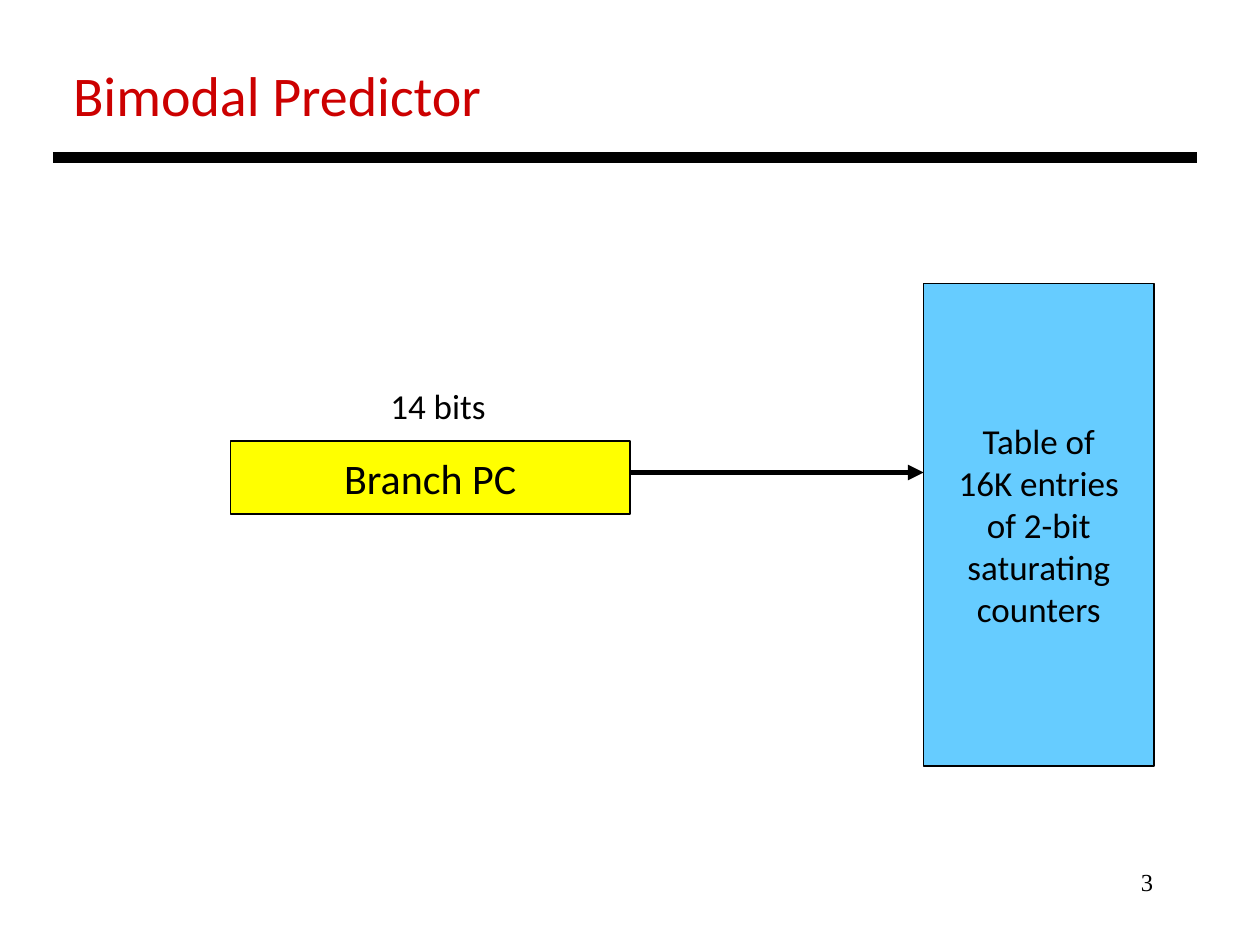
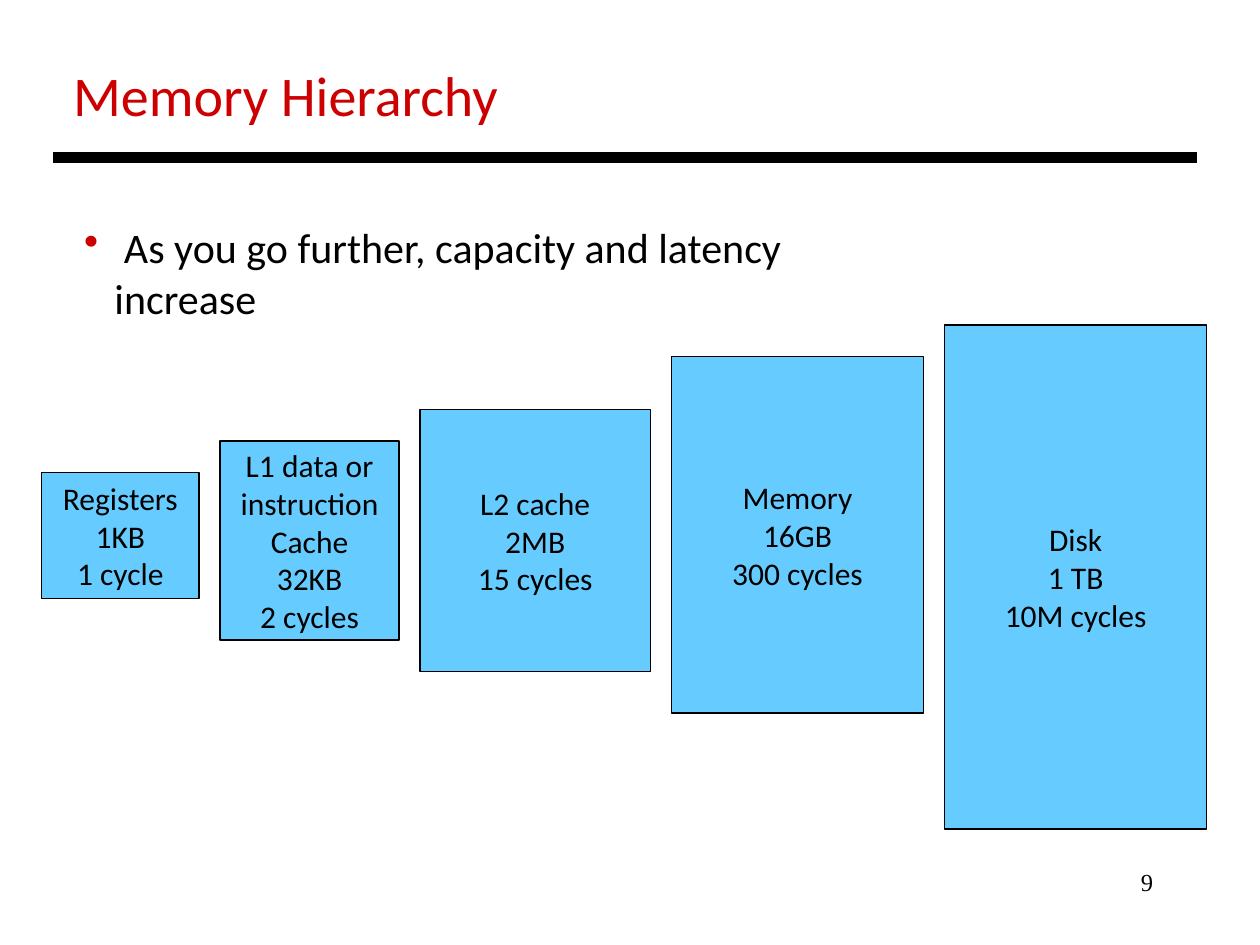
from pptx import Presentation
from pptx.dml.color import RGBColor as RGB
from pptx.enum.shapes import MSO_CONNECTOR as Conn, MSO_SHAPE as Kind
from pptx.enum.text import MSO_ANCHOR as Anchor, MSO_AUTO_SIZE as Fit, PP_ALIGN as Align
from pptx.oxml.ns import qn
from pptx.util import Inches, Pt
from lxml.etree import SubElement as Sub

BLACK, RED, BLUE, YELLOW = "000000", "CC0000", "66CCFF", "FFFF00"
FONT, NUM_FONT = "Calibri", "Times New Roman"
GAP = 1 / 6  # space between the memory levels

# Level text, top, width, height
LEVELS = [
    ("Registers\n1KB\n1 cycle", 3.75, 1.25, 1),
    ("L1 data or\ninstruction\nCache\n32KB\n2 cycles", 3.5, 1.42, 1.58),
    ("L2 cache\n2MB\n15 cycles", 3.25, 1.83, 2.08),
    ("Memory\n16GB\n300 cycles", 2.83, 2, 2.83),
    ("Disk\n1 TB\n10M cycles", 2.58, 2.08, 4),
]


def color(code):
    return RGB.from_string(code)


def write(shape, text, size=20, font=FONT, ink=BLACK, align=Align.LEFT,
          anchor=Anchor.TOP, wrap=False):
    """Fill a shape with text, one paragraph per line."""
    frame = shape.text_frame
    frame.text = text
    frame.auto_size = Fit.NONE
    frame.word_wrap = wrap
    frame.vertical_anchor = anchor
    for para in frame.paragraphs:
        para.alignment = align
        for run in para.runs:
            run.font.size = Pt(size)
            run.font.name = font
            run.font.color.rgb = color(ink)


def label(slide, text, x, y, w, h, **style):
    area = slide.shapes.add_textbox(Inches(x), Inches(y), Inches(w), Inches(h))
    write(area, text, **style)
    return area


def box(slide, text, x, y, w, h, fill=BLUE, size=20):
    rect = slide.shapes.add_shape(Kind.RECTANGLE, Inches(x), Inches(y),
                                  Inches(w), Inches(h))
    rect.shadow.inherit = False
    rect.fill.solid()
    rect.fill.fore_color.rgb = color(fill)
    rect.line.color.rgb = color(BLACK)
    rect.line.width = Pt(0.75)
    write(rect, text, size=size, align=Align.CENTER, anchor=Anchor.MIDDLE)


def line(slide, x1, x2, y, width, arrow=False):
    """Draw a level line, with an arrowhead at its right end if asked."""
    link = slide.shapes.add_connector(Conn.STRAIGHT, Inches(x1), Inches(y),
                                      Inches(x2), Inches(y))
    link.line.color.rgb = color(BLACK)
    link.line.width = Pt(width)
    if arrow:
        Sub(link.line._get_or_add_ln(), qn("a:tailEnd"), type="triangle")
    Sub(link._element.spPr, qn("a:effectLst"))


def bullet(para, indent):
    props = para._p.get_or_add_pPr()
    props.set("marL", str(Inches(indent)))
    props.set("indent", str(-Inches(indent)))
    Sub(Sub(props, qn("a:buClr")), qn("a:srgbClr"), val=RED)
    Sub(props, qn("a:buChar"), char="•")


def start(deck, name, width, number):
    """Add a slide with the shared title, rule and page number."""
    slide = deck.slides.add_slide(deck.slide_layouts[5])
    title = slide.shapes.title
    title.left, title.top = Inches(0.48), Inches(0.43)
    title.width, title.height = Inches(width), Inches(0.64)
    write(title, name, size=32, ink=RED)
    line(slide, 0.42, 9.5, 1.25, 6)
    label(slide, number, 7.17, 6.83, 2.08, 0.5, size=14, font=NUM_FONT,
          align=Align.RIGHT, wrap=True)
    return slide


def predictor(deck):
    slide = start(deck, "Bimodal Predictor", 3.48, "3")
    box(slide, "Branch PC", 1.83, 3.5, 3.17, 0.58, fill=YELLOW, size=24)
    line(slide, 5, 7.33, 3.75, 3, arrow=True)
    label(slide, "14 bits", 3, 3, 0.97, 0.44)
    box(slide, "Table of\n16K entries\nof 2-bit\nsaturating\ncounters",
        7.33, 2.25, 1.83, 3.83)


def memory(deck):
    slide = start(deck, "Memory Hierarchy", 3.61, "9")
    note = label(slide, " As you go further, capacity and latency increase",
                 0.57, 1.71, 6.85, 0.5, size=24, wrap=True)
    bullet(note.text_frame.paragraphs[0], 0.24)
    # Levels run left to right with equal gaps
    x = 0.33
    for text, y, w, h in LEVELS:
        box(slide, text, x, y, w, h, size=18)
        x += w + GAP


def main():
    deck = Presentation()
    deck.slide_width, deck.slide_height = Inches(10), Inches(7.5)
    predictor(deck)
    memory(deck)
    deck.save("out.pptx")


if __name__ == "__main__":
    main()
